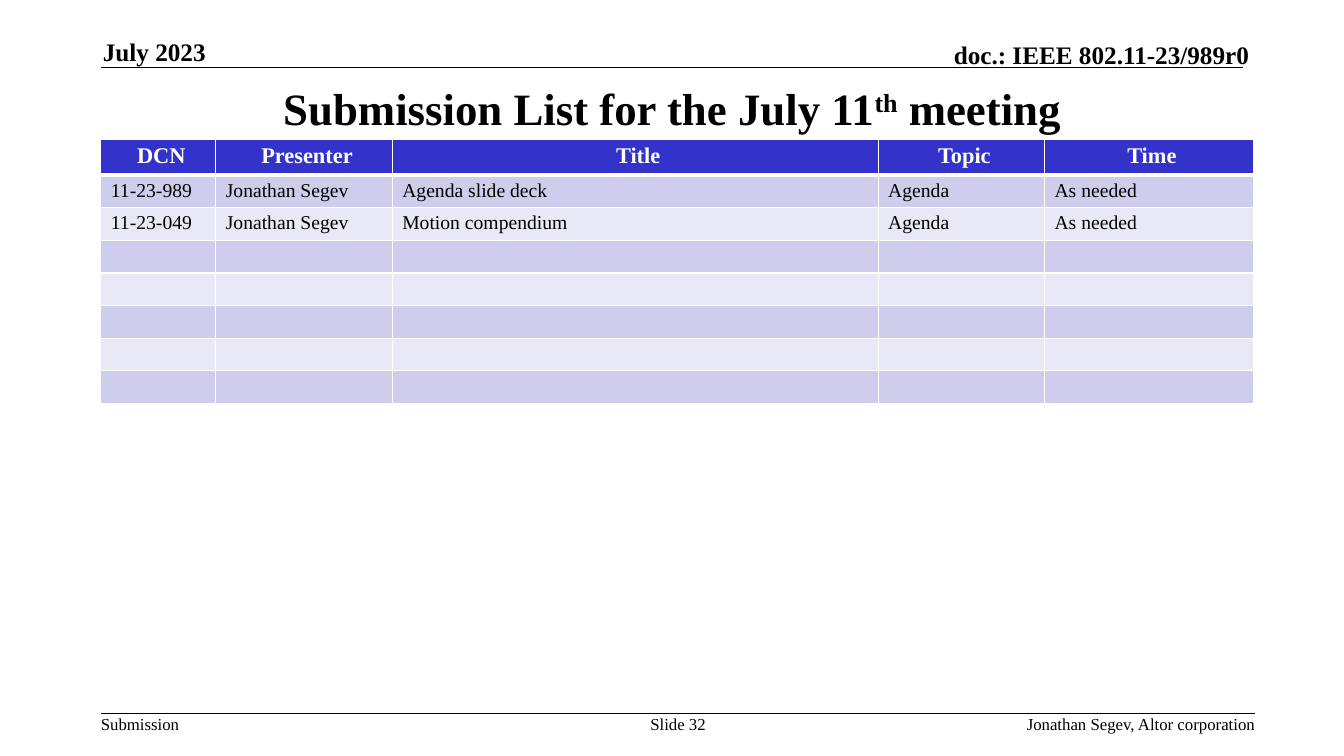
from pptx import Presentation
from pptx.dml.color import RGBColor
from pptx.enum.shapes import MSO_CONNECTOR
from pptx.enum.text import MSO_ANCHOR, PP_ALIGN
from pptx.oxml.ns import qn
from pptx.util import Inches, Pt
from lxml import etree

LEFT, CENTER, RIGHT = PP_ALIGN.LEFT, PP_ALIGN.CENTER, PP_ALIGN.RIGHT
TOP, MIDDLE, BOTTOM = MSO_ANCHOR.TOP, MSO_ANCHOR.MIDDLE, MSO_ANCHOR.BOTTOM
STRAIGHT = MSO_CONNECTOR.STRAIGHT

FONT = "Times New Roman"
BLACK, WHITE, HEADER_FILL = "000000", "FFFFFF", "3333CC"
BAND_FILLS = ("CECEEC", "E8E8F6")
COLUMN_WIDTHS = (1.14, 1.75, 4.82, 1.65, 2.07)
HEADER_HEIGHT, ROW_HEIGHT = 0.35, 0.315
ROW_COUNT = 8
SUBMISSIONS = (
    ("DCN", "Presenter", "Title", "Topic", "Time"),
    ("11-23-989", "Jonathan Segev", "Agenda slide deck", "Agenda", "As needed"),
    ("11-23-049", "Jonathan Segev", "Motion compendium", "Agenda", "As needed"),
)


def color(value):
    """Return the colour for a hex string."""
    return RGBColor.from_string(value)


def write(para, text, size=12, bold=False, fill=BLACK, align=LEFT, raised=False):
    """Add a formatted span of text to a paragraph."""
    para.alignment = align
    span = para.add_run()
    span.text = text
    span.font.name = FONT
    span.font.size = Pt(size)
    span.font.bold = bold
    span.font.color.rgb = color(fill)
    if raised:
        span.font._element.set("baseline", "30000")


def add_label(slide, box, text, anchor=TOP, wrap=True, **style):
    """Place one line of text in a box without margins."""
    label = slide.shapes.add_textbox(*map(Inches, box))
    frame = label.text_frame
    frame.word_wrap = wrap
    frame.vertical_anchor = anchor
    frame.margin_left = frame.margin_right = frame.margin_top = frame.margin_bottom = 0
    write(frame.paragraphs[0], text, **style)


def add_rule(slide, left, top, width):
    """Draw a thin black horizontal rule."""
    ends = map(Inches, (left, top, left + width, top))
    rule = slide.shapes.add_connector(STRAIGHT, *ends)
    rule.line.color.rgb = color(BLACK)
    rule.line.width = Pt(1)
    etree.SubElement(rule._element.spPr, qn("a:effectLst"))


def add_header(slide, left, top, width):
    """Place the date and document number above a rule."""
    heading = dict(size=18, bold=True, anchor=BOTTOM)
    add_rule(slide, left, top + 0.31, width)
    add_label(slide, (left + 0.02, top, 2.73, 0.3), "July 2023", **heading)
    add_label(slide, (left + width - 5.04, top + 0.03, 5.1, 0.3),
              "doc.: IEEE 802.11-23/989r0", align=RIGHT, **heading)


def add_title(slide, left, top, width, height):
    """Fill the title placeholder."""
    title = slide.shapes.title
    title.left, title.top, title.width, title.height = map(
        Inches, (left, top, width, height))
    title.text_frame.vertical_anchor = MIDDLE
    para = title.text_frame.paragraphs[0]
    for text, raised in (("Submission List for the July 11", False),
                         ("th", True), (" meeting", False)):
        write(para, text, size=32, bold=True, align=CENTER, raised=raised)


def add_borders(cell, top, bottom):
    """Give a cell white borders with the given top and bottom widths."""
    properties = cell._tc.get_or_add_tcPr()
    widths = {"lnL": 1, "lnR": 1, "lnT": top, "lnB": bottom}
    for index, (side, width) in enumerate(widths.items()):
        line = etree.Element(qn(f"a:{side}"), w=str(Pt(width)))
        solid = etree.SubElement(line, qn("a:solidFill"))
        etree.SubElement(solid, qn("a:srgbClr"), val=WHITE)
        properties.insert(index, line)


def format_cell(cell, text, row):
    """Fill a cell in header or banded body style."""
    header = row == 0
    cell.fill.solid()
    cell.fill.fore_color.rgb = color(HEADER_FILL if header else BAND_FILLS[(row - 1) % 2])
    cell.margin_left = Inches(0.1)
    cell.margin_right = Inches(0.04 if header else 0.1)
    cell.margin_top = cell.margin_bottom = Inches(0.045)
    para = cell.text_frame.paragraphs[0]
    if header:
        write(para, text, size=16, bold=True, fill=WHITE, align=CENTER)
    elif text:
        write(para, text, size=14)
    else:
        etree.SubElement(para._p, qn("a:endParaRPr"), sz="1400")
    add_borders(cell, top=3 if row == 1 else 1, bottom=3 if header else 1)


def add_submissions(slide, left, top, width):
    """Place the submission table."""
    height = HEADER_HEIGHT + (ROW_COUNT - 1) * ROW_HEIGHT
    table = slide.shapes.add_table(
        ROW_COUNT, len(COLUMN_WIDTHS), *map(Inches, (left, top, width, height))).table
    for column, column_width in zip(table.columns, COLUMN_WIDTHS):
        column.width = Inches(column_width)
    blank = ("",) * len(COLUMN_WIDTHS)
    for index, row in enumerate(table.rows):
        row.height = Inches(ROW_HEIGHT if index else HEADER_HEIGHT)
        texts = SUBMISSIONS[index] if index < len(SUBMISSIONS) else blank
        for cell, text in zip(row.cells, texts):
            format_cell(cell, text, index)


def add_footer(slide, left, top, width):
    """Place the footer texts below a rule."""
    add_rule(slide, left, top, width)
    add_label(slide, (left, top, 0.79, 0.2), "Submission", wrap=False)
    add_label(slide, (left + 5.34, top, 0.77, 0.4), "Slide 32", align=CENTER)
    add_label(slide, (left + width - 4.64, top, 4.64, 0.2),
              "Jonathan Segev, Altor corporation", align=RIGHT)


def main():
    """Build and save the deck."""
    deck = Presentation()
    deck.slide_width, deck.slide_height = Inches(13.33), Inches(7.5)
    slide = deck.slides.add_slide(deck.slide_layouts[5])
    add_header(slide, 1, 0.36, 11.33)
    add_title(slide, 1, 0.75, 11.33, 0.64)
    add_submissions(slide, 1, 1.38, sum(COLUMN_WIDTHS))
    add_footer(slide, 1, 7.08, 11.45)
    deck.save("out.pptx")


if __name__ == "__main__":
    main()
